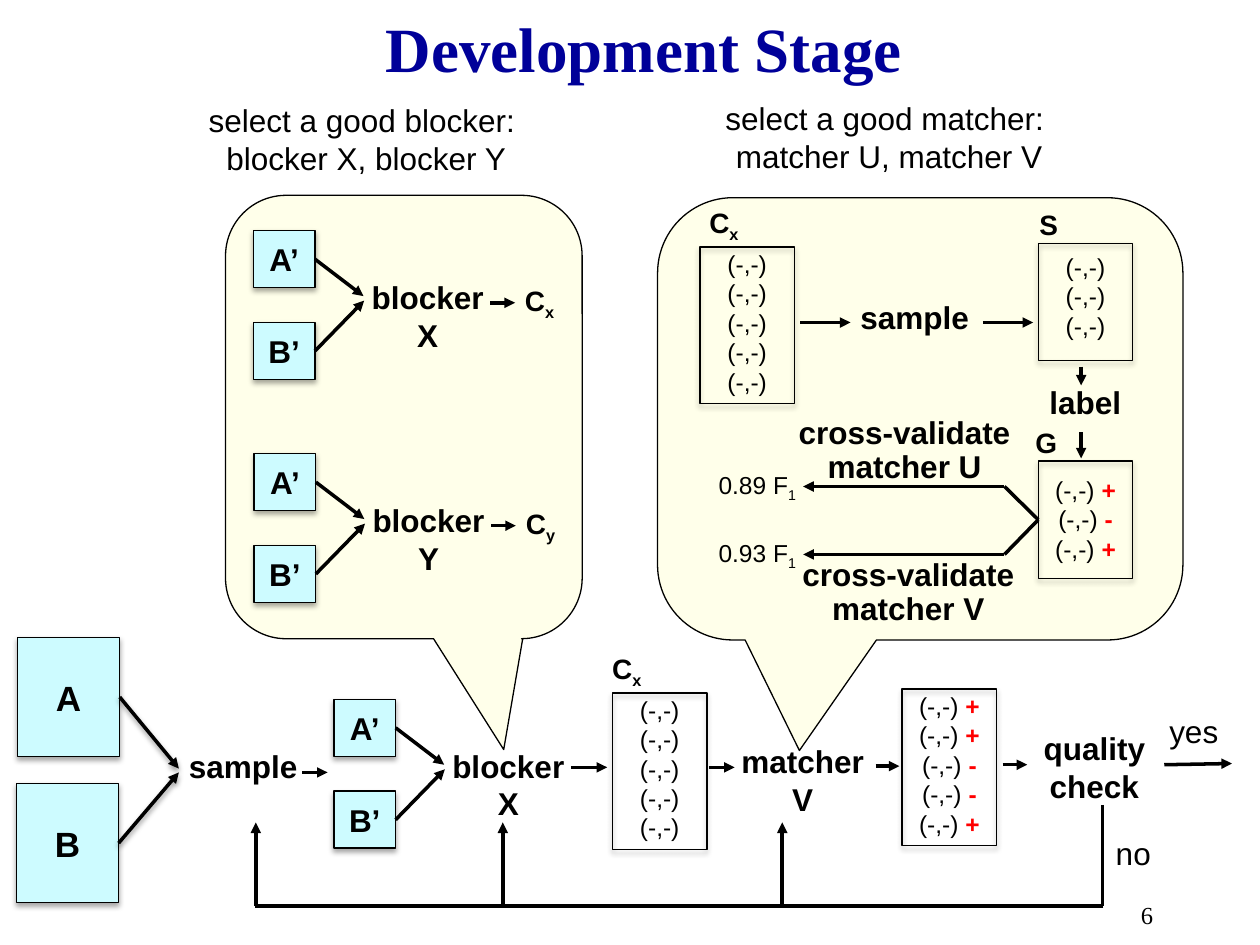
"""Build the Development Stage slide of an entity matching workflow."""
from collections import namedtuple

from lxml.etree import SubElement
from pptx import Presentation
from pptx.dml.color import RGBColor
from pptx.enum.shapes import MSO_CONNECTOR, MSO_SHAPE
from pptx.enum.text import MSO_ANCHOR, PP_ALIGN
from pptx.oxml.ns import qn
from pptx.util import Pt

Type = namedtuple("Type", "size bold font color spacing")
Theme = namedtuple(
    "Theme", "ink tile bubble flag outline arrow title page table step tight note symbol pair")

THEME = Theme(
    ink="000000", tile="CDFBFF", bubble="FFFFEA", flag="FF0000", outline=0.75, arrow=2,
    title=Type(36, True, "Times New Roman", "000099", 1),
    page=Type(14, False, "Times New Roman", "000000", 1),
    table=Type(20, True, "Arial", "000000", 1),
    step=Type(18, True, "Arial", "000000", 1),
    tight=Type(18, True, "Arial", "000000", 0.9),
    note=Type(18, False, "Arial", "000000", 1),
    symbol=Type(16, True, "Arial", "000000", 1),
    pair=Type(14, False, "Arial", "000000", 1),
)


def sub(base, index):
    return base, index, "sub"


def flagged(signs):
    return [("(-,-) ", sign, "flag") for sign in signs]


class Stage:
    """Hold the theme and the slide, and draw each kind of element."""

    def __init__(self, slide, theme):
        self.slide = slide
        self.theme = theme

    def fill_text(self, frame, lines, style, align):
        frame.word_wrap = True
        for number, line in enumerate(lines):
            paragraph = frame.paragraphs[0] if number == 0 else frame.add_paragraph()
            base, mark, kind = (line, "", "") if isinstance(line, str) else line
            paragraph.text = base
            if mark:
                paragraph.add_run().text = mark
            paragraph.alignment = align
            paragraph.line_spacing = style.spacing
            for run in paragraph.runs:
                run.font.size = Pt(style.size)
                run.font.name = style.font
                run.font.bold = style.bold
                run.font.color.rgb = RGBColor.from_string(style.color)
            if kind == "sub":
                run._r.get_or_add_rPr().set("baseline", "-25000")
            elif kind == "flag":
                run.font.bold = True
                run.font.color.rgb = RGBColor.from_string(self.theme.flag)

    def text(self, x, y, w, h, lines, style, align=PP_ALIGN.CENTER, anchor=MSO_ANCHOR.TOP):
        frame = self.slide.shapes.add_textbox(Pt(x), Pt(y), Pt(w), Pt(h)).text_frame
        frame.vertical_anchor = anchor
        self.fill_text(frame, lines, style, align)

    def shadow(self, element, opacity):
        effects = element.spPr.find(qn("a:effectLst"))
        cast = SubElement(effects, qn("a:outerShdw"), blurRad=str(Pt(3.1)),
                          dist=str(Pt(1.8)), dir="5400000", rotWithShape="0")
        color = SubElement(cast, qn("a:srgbClr"), val=self.theme.ink)
        SubElement(color, qn("a:alpha"), val=str(opacity * 1000))

    def shape(self, preset, x, y, w, h, fill=None):
        shape = self.slide.shapes.add_shape(preset, Pt(x), Pt(y), Pt(w), Pt(h))
        shape.shadow.inherit = False
        if fill:
            shape.fill.solid()
            shape.fill.fore_color.rgb = RGBColor.from_string(fill)
        else:
            shape.fill.background()
        shape.line.color.rgb = RGBColor.from_string(self.theme.ink)
        shape.line.width = Pt(self.theme.outline)
        return shape

    def bubble(self, x, y, w, h, tip):
        bubble = self.shape(MSO_SHAPE.ROUNDED_RECTANGULAR_CALLOUT, x, y, w, h, self.theme.bubble)
        for index, value in enumerate((*tip, 0.17)):
            bubble.adjustments[index] = value

    def tile(self, x, y, w, h, name, style):
        tile = self.shape(MSO_SHAPE.RECTANGLE, x, y, w, h, self.theme.tile)
        self.shadow(tile._element, 35)
        tile.text_frame.vertical_anchor = MSO_ANCHOR.MIDDLE
        self.fill_text(tile.text_frame, [name], style, PP_ALIGN.CENTER)
        return tile

    def pairs(self, x, y, h, lines, drop=-2.5):
        box = self.shape(MSO_SHAPE.RECTANGLE, x, y, 54, h)
        self.shadow(box._element, 35)
        self.text(x, y + drop, 54, h, lines, self.theme.pair)
        return box

    def line(self, start, end, head=True, source=None, side=3, cast=False):
        line = self.slide.shapes.add_connector(
            MSO_CONNECTOR.STRAIGHT, *(Pt(value) for value in (*start, *end)))
        if source is not None:
            line.begin_connect(source, side)
        line.line.color.rgb = RGBColor.from_string(self.theme.ink)
        line.line.width = Pt(self.theme.arrow)
        if head:
            SubElement(line.line._get_or_add_ln(), qn("a:tailEnd"), type="triangle")
        SubElement(line._element.spPr, qn("a:effectLst"))
        if cast:
            self.shadow(line._element, 38)

    def blocker(self, x, y, name):
        for letter, top, tip in (("A’", 0, (63, 37.4)), ("B’", 52.5, (63.4, 40))):
            tile = self.tile(x, y + top, 35.3, 32.6, letter, self.theme.step)
            self.line((x + 35.3, y + top + 16.3), (x + tip[0], y + tip[1]), source=tile)
        self.text(x + 59, y + 23.5, 81.4, 51, [f"blocker {name}"], self.theme.step)

    def symbol(self, x, y, line):
        self.text(x, y, 34.6, 26.6, [line], self.theme.symbol, PP_ALIGN.LEFT)


def main():
    deck = Presentation()
    deck.slide_width, deck.slide_height = Pt(720), Pt(540)
    theme = THEME
    stage = Stage(deck.slides.add_slide(deck.slide_layouts[6]), theme)

    stage.text(62, 0, 612, 54, ["Development Stage"], theme.title, anchor=MSO_ANCHOR.MIDDLE)
    stage.text(516, 510.5, 150, 29, ["6"], theme.page, PP_ALIGN.RIGHT)
    stage.text(5.8, 54, 402, 51, ["select a good blocker:", " blocker X, blocker Y"], theme.note)
    stage.text(304.6, 53, 402, 51, ["select a good matcher:", " matcher U, matcher V"], theme.note)
    stage.bubble(375.8, 113, 300.2, 252.7, (-0.23, 0.75))
    stage.bubble(128.9, 111.6, 203.8, 253.4, (0.28, 0.75))

    for x, y, name in ((144.7, 131.8, "X"), (145.2, 259.2, "Y")):
        stage.blocker(x, y, name)
        stage.line((x + 135.4, y + 41.2), (x + 149.6, y + 41.2))
        stage.symbol(x + 148.2, y + 26.6, sub("C", name.lower()))

    plain = "(-,-)"
    stage.symbol(398.2, 113.8, sub("C", "x"))
    stage.pairs(400, 141.2, 89.3, [plain] * 5)
    stage.text(484.6, 167, 79.2, 29, ["sample"], theme.step, PP_ALIGN.LEFT)
    for x in (457.2, 561.6):
        stage.line((x, 184.3), (x + 28.8, 184.3))
    stage.symbol(586.8, 115.2, "S")
    stage.pairs(593.3, 139, 67, [plain] * 3, 1.5)
    stage.text(592.6, 215.3, 67.7, 29, ["label"], theme.step, PP_ALIGN.LEFT)
    for top, bottom in ((209.5, 220.3), (247, 262)):
        stage.line((617.8, top), (617.8, bottom))
    stage.symbol(584.6, 239.8, "G")
    labelled = stage.pairs(593.3, 263.5, 67, flagged("+-+"), 4.3)
    for y, score, matcher, x, top in ((278, "0.89 F", "U", 429.8, 234.7),
                                      (316.8, "0.93 F", "V", 432, 316)):
        stage.text(393.2, y - 13, 79.2, 24.5, [sub(score, "1")], theme.pair)
        stage.text(x, top, 174.2, 46.8, ["cross-validate", f"matcher {matcher}"], theme.tight)
        stage.line((593.3, 297), (574, y), head=False, source=labelled, side=1)
        stage.line((574, y), (459, y))

    for x, y, name, tip in ((10, 364.3, "A", 439.2), (9.4, 447.8, "B", 441.4)):
        source = stage.tile(x, y, 58.4, 68, name, theme.table)
        stage.line((x + 58.4, y + 34), (102.2, tip), source=source, cast=True)
    stage.text(99.4, 423.4, 79.2, 29, ["sample"], theme.step)
    stage.blocker(190.8, 399.6, "X")
    stage.symbol(342.7, 368.6, sub("C", "x"))
    stage.pairs(350, 396, 89.3, [plain] * 5)
    stage.text(413.3, 420.5, 90.7, 51, ["matcher V"], theme.step)
    stage.pairs(515.5, 393.8, 89.3, flagged("++--+"))
    stage.text(564.5, 413.3, 121.7, 51, ["quality", "check"], theme.step)
    stage.text(632.9, 403.5, 98.6, 31, ["yes"], theme.note)
    for start, end, y in ((172.8, 187.2, 441.4), (326.2, 347, 438.5), (405.4, 419.8, 438.5),
                          (500.4, 514, 437.8), (573, 587, 437)):
        stage.line((start, y), (end, y))
    stage.line((665.3, 437), (704, 436.3))

    loop = 517.7
    stage.text(598.3, 473, 98.6, 29, ["no"], theme.note)
    stage.line((630, 460), (630, loop), head=False)
    stage.line((630.5, loop), (145.6, loop), head=False)
    for x in (146.2, 287.3, 447):
        stage.line((x, loop), (x, 470))

    deck.save("out.pptx")


if __name__ == "__main__":
    main()
